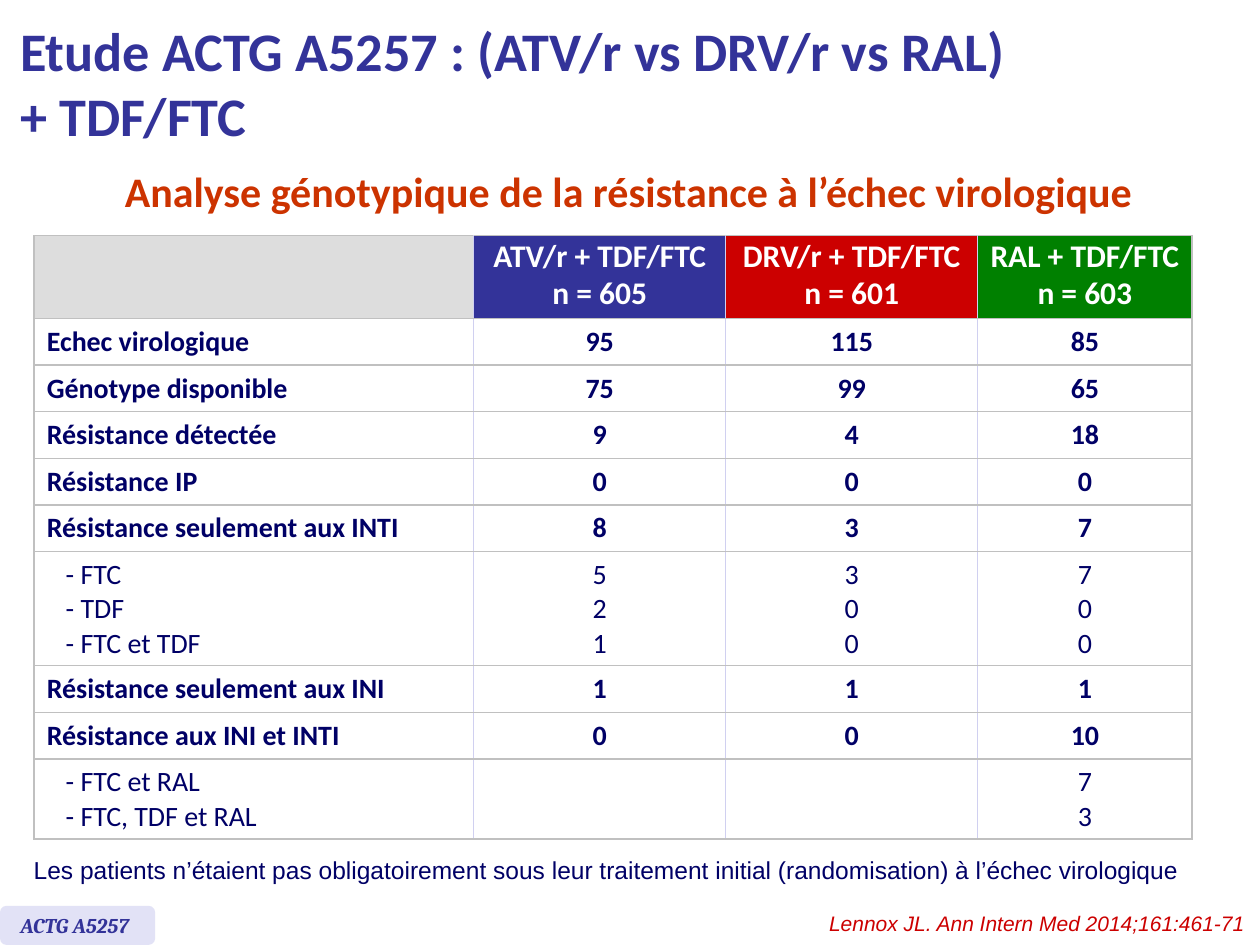
from dataclasses import dataclass

from lxml import etree
from pptx import Presentation
from pptx.dml.color import RGBColor
from pptx.enum.shapes import MSO_SHAPE
from pptx.enum.text import MSO_ANCHOR, MSO_AUTO_SIZE, PP_ALIGN
from pptx.oxml.ns import qn
from pptx.util import Cm, Pt

LEFT, CENTER, RIGHT = PP_ALIGN.LEFT, PP_ALIGN.CENTER, PP_ALIGN.RIGHT
MIDDLE = MSO_ANCHOR.MIDDLE
NO_AUTOFIT = MSO_AUTO_SIZE.NONE
ROUNDED = MSO_SHAPE.ROUNDED_RECTANGLE

WHITE = RGBColor(0xFF, 0xFF, 0xFF)
NAVY = RGBColor(0x00, 0x00, 0x66)
INDIGO = RGBColor(0x33, 0x33, 0x99)
RED = RGBColor(0xCC, 0x00, 0x00)
GREEN = RGBColor(0x00, 0x80, 0x00)
ORANGE = RGBColor(0xCC, 0x33, 0x00)
LAVENDER = RGBColor(0xE2, 0xE2, 0xF6)
LIGHT_GREY = RGBColor(0xDD, 0xDD, 0xDD)
GRID_GREY = RGBColor(0xC0, 0xC0, 0xC0)
GRID_LILAC = RGBColor(0xD0, 0xD0, 0xF0)


@dataclass(frozen=True)
class Style:
    font: str
    size: float
    color: RGBColor
    bold: bool = False
    italic: bool = False
    align: PP_ALIGN = LEFT


@dataclass(frozen=True)
class Arm:
    name: str
    patients: int
    color: RGBColor
    width: float


@dataclass(frozen=True)
class Result:
    label: str
    values: tuple[str, str, str]
    height: float = 0.94
    detail: bool = False


ARMS = [
    Arm("ATV/r + TDF/FTC", 605, INDIGO, 5.08),
    Arm("DRV/r + TDF/FTC", 601, RED, 5.08),
    Arm("RAL + TDF/FTC", 603, GREEN, 4.32),
]
LABEL_WIDTH = 8.86
HEADER_HEIGHT = 1.67
RESULTS = [
    Result("Echec virologique", ("95", "115", "85")),
    Result("Génotype disponible", ("75", "99", "65")),
    Result("Résistance détectée", ("9", "4", "18")),
    Result("Résistance IP", ("0", "0", "0")),
    Result("Résistance seulement aux INTI", ("8", "3", "7")),
    Result("- FTC\v- TDF\v- FTC et TDF", ("5\v2\v1", "3\v0\v0", "7\v0\v0"), 2.3, True),
    Result("Résistance seulement aux INI", ("1", "1", "1")),
    Result("Résistance aux INI et INTI", ("0", "0", "10")),
    Result("- FTC et RAL\v- FTC, TDF et RAL", ("", "", "7\v3"), 1.61, True),
]


def write(paragraph, text: str, style: Style) -> None:
    paragraph.text = text
    paragraph.alignment = style.align
    font = paragraph.font
    font.name, font.size = style.font, Pt(style.size)
    font.bold, font.italic = style.bold, style.italic
    font.color.rgb = style.color


def add_text(slide, left: float, top: float, width: float, height: float,
             text: str, style: Style, wrap: bool = True):
    box = slide.shapes.add_textbox(Cm(left), Cm(top), Cm(width), Cm(height))
    box.text_frame.word_wrap = wrap
    paragraph = box.text_frame.paragraphs[0]
    write(paragraph, text, style)
    return paragraph


def format_cell(cell, fill: RGBColor, first: bool, last: bool) -> None:
    """Grey outer frame and row rules, lilac rules between columns."""
    edges = {
        "a:lnL": GRID_GREY if first else GRID_LILAC,
        "a:lnR": GRID_GREY if last else GRID_LILAC,
        "a:lnT": GRID_GREY,
        "a:lnB": GRID_GREY,
    }
    properties = cell._tc.get_or_add_tcPr()
    for tag, color in edges.items():
        line = etree.SubElement(properties, qn(tag), w=str(Pt(1)))
        solid = etree.SubElement(line, qn("a:solidFill"))
        etree.SubElement(solid, qn("a:srgbClr"), val=str(color))
    cell.fill.solid()
    cell.fill.fore_color.rgb = fill


def add_results_table(slide) -> None:
    widths = [LABEL_WIDTH] + [arm.width for arm in ARMS]
    heights = [HEADER_HEIGHT] + [result.height for result in RESULTS]
    table = slide.shapes.add_table(
        len(heights), len(widths), Cm(0.69), Cm(4.75),
        Cm(sum(widths)), Cm(sum(heights))).table
    for column, width in zip(table.columns, widths):
        column.width = Cm(width)
    for row, height in zip(table.rows, heights):
        row.height = Cm(height)

    # Treatment arms
    format_cell(table.cell(0, 0), LIGHT_GREY, True, False)
    heading = Style("Calibri", 18, WHITE, bold=True, align=CENTER)
    for col, arm in enumerate(ARMS, start=1):
        cell = table.cell(0, col)
        format_cell(cell, arm.color, False, col == len(ARMS))
        cell.vertical_anchor = MIDDLE
        name = cell.text_frame.paragraphs[0]
        count = cell.text_frame.add_paragraph()
        write(name, arm.name, heading)
        write(count, f"n = {arm.patients}", heading)
        name.line_spacing = count.line_spacing = 0.8
        count.space_before = Pt(3.6)

    # Results
    for row, result in enumerate(RESULTS, start=1):
        for col, text in enumerate((result.label, *result.values)):
            cell = table.cell(row, col)
            format_cell(cell, WHITE, col == 0, col == len(ARMS))
            paragraph = cell.text_frame.paragraphs[0]
            write(paragraph, text, Style("Calibri", 16, NAVY, bold=not result.detail,
                                         align=CENTER if col else LEFT))
            if result.detail and col == 0:
                paragraph._p.get_or_add_pPr().set("marL", str(Cm(0.38)))


def add_study_badge(slide) -> None:
    badge = slide.shapes.add_shape(ROUNDED, Cm(0), Cm(18.26), Cm(3.13), Cm(0.79))
    badge.adjustments[0] = 0.17
    badge.shadow.inherit = False
    badge.fill.solid()
    badge.fill.fore_color.rgb = LAVENDER
    badge.line.fill.background()
    frame = badge.text_frame
    frame.margin_left, frame.margin_right = Cm(0.38), Cm(0)
    frame.margin_top = frame.margin_bottom = Cm(0)
    write(frame.paragraphs[0], "ACTG A5257",
          Style("Cambria", 12, INDIGO, bold=True, italic=True))


def main() -> None:
    presentation = Presentation()
    presentation.slide_width, presentation.slide_height = Cm(25.4), Cm(19.05)
    slide = presentation.slides.add_slide(presentation.slide_layouts[5])

    # Title and subtitle
    title = slide.shapes.title
    title.left, title.top, title.width, title.height = Cm(0.15), Cm(0.13), Cm(25.25), Cm(3.07)
    title.text_frame.auto_size = NO_AUTOFIT
    title.text_frame.vertical_anchor = MIDDLE
    write(title.text_frame.paragraphs[0],
          "Etude ACTG A5257 : (ATV/r vs DRV/r vs RAL)\v+ TDF/FTC",
          Style("Calibri", 31, INDIGO, bold=True))
    subtitle = add_text(slide, 2.16, 3.38, 21.03, 1.14,
                        "Analyse génotypique de la résistance à l’échec virologique",
                        Style("Calibri", 24, ORANGE, bold=True, align=CENTER), wrap=False)
    subtitle.line_spacing = Pt(24)

    add_results_table(slide)

    # Note, study badge and reference
    add_text(slide, 0.43, 17.12, 24.97, 0.84,
             "Les patients n’étaient pas obligatoirement sous leur traitement initial "
             "(randomisation) à l’échec virologique", Style("Arial", 14, NAVY))
    add_study_badge(slide)
    add_text(slide, 14.94, 18.24, 10.41, 0.76, "Lennox JL. Ann Intern Med 2014;161:461-71",
             Style("Arial", 12, RED, italic=True, align=RIGHT))

    presentation.save("out.pptx")


if __name__ == "__main__":
    main()
